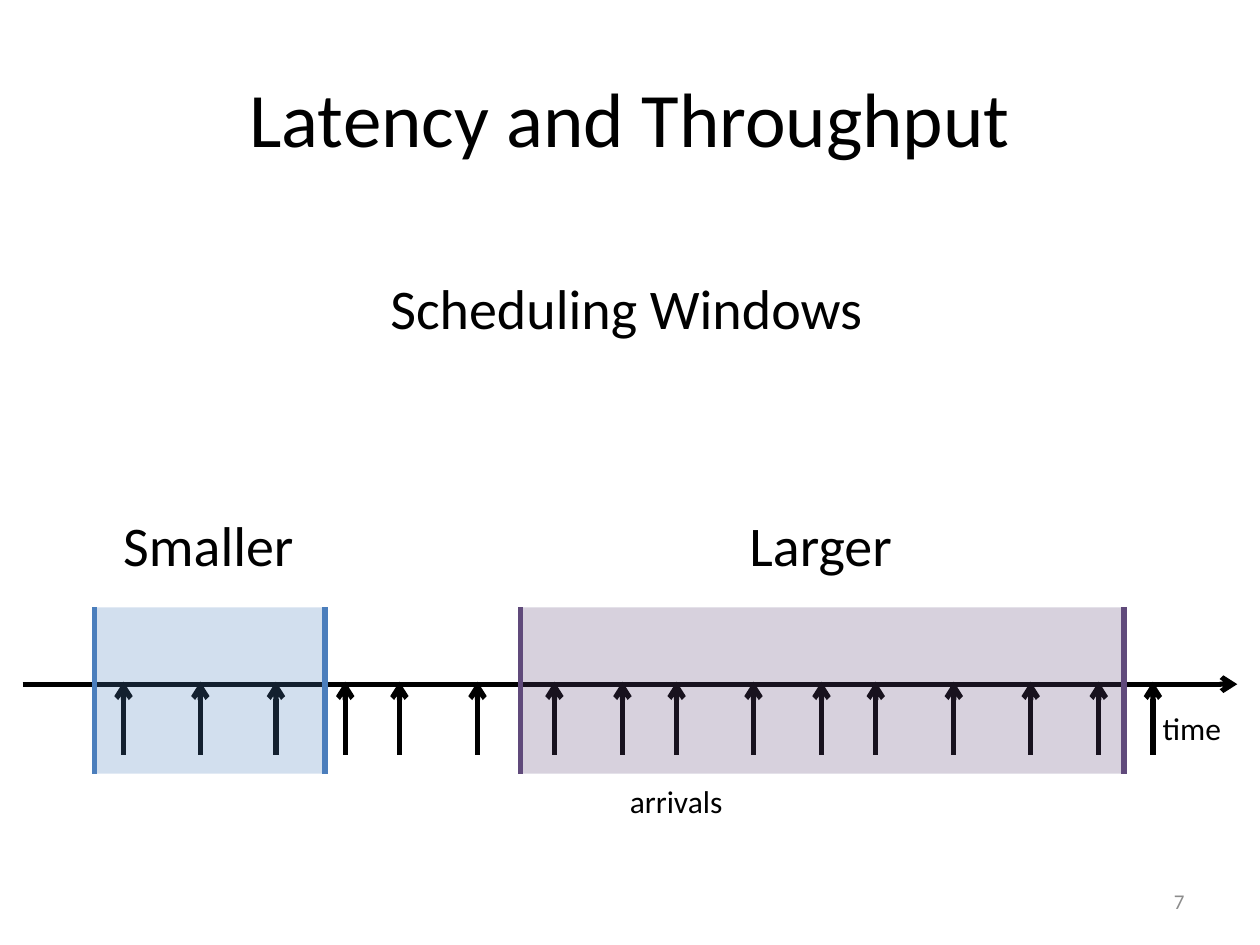
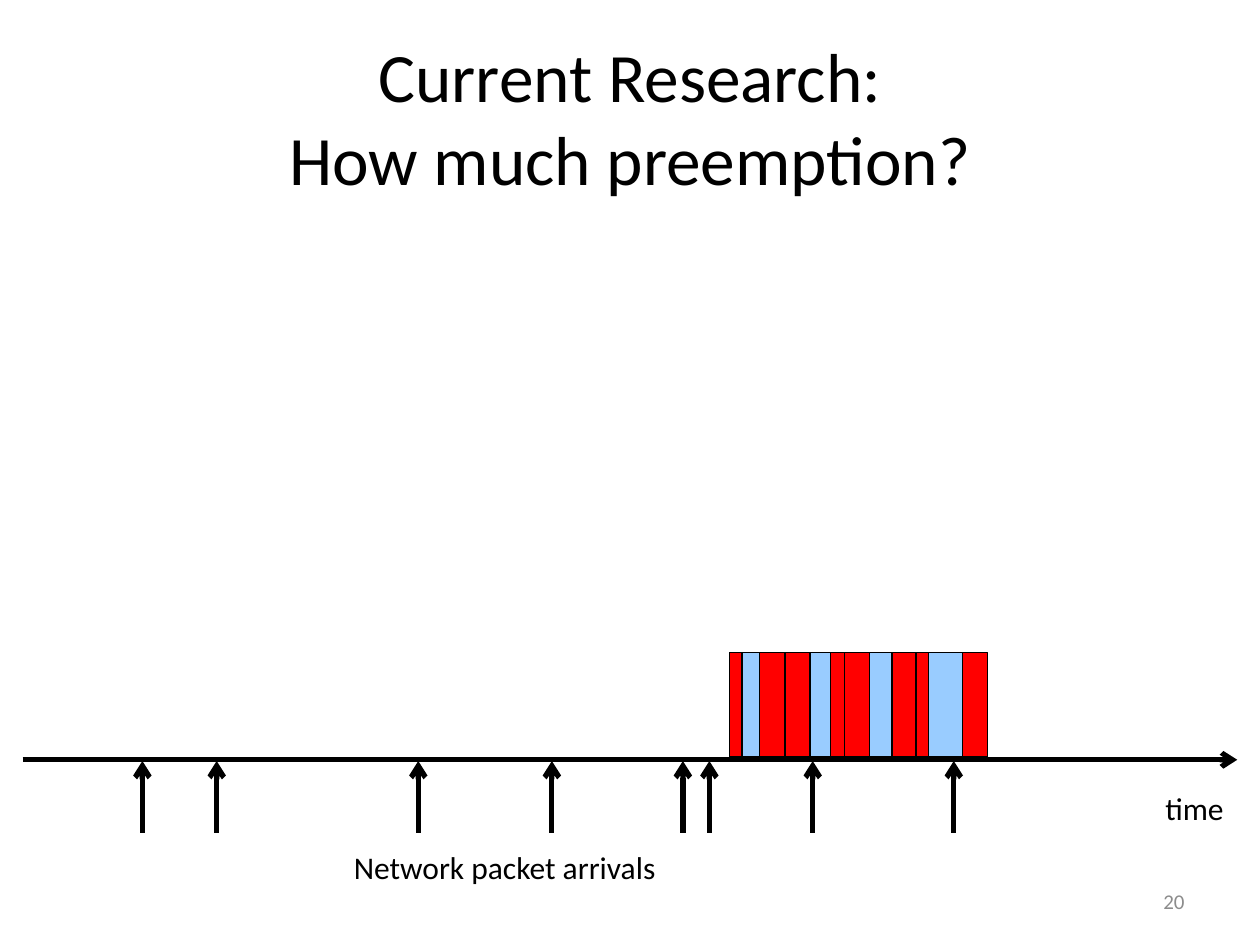
"""Build two slides on scheduling windows and preemption along a packet timeline."""
from lxml.etree import SubElement
from pptx import Presentation
from pptx.dml.color import RGBColor
from pptx.enum.shapes import MSO_CONNECTOR, MSO_SHAPE
from pptx.enum.text import MSO_ANCHOR, MSO_AUTO_SIZE, PP_ALIGN
from pptx.oxml.ns import qn
from pptx.util import Inches, Pt

FONT = "Calibri"
COLORS = {
    "ink": "000000",
    "number": "8C8C8C",
    "small_fill": "4F81BD",
    "small_edge": "4B7EBC",
    "large": "604A7B",
    "task": "99CCFF",
    "preemption": "FF0000",
}
AXIS_LEFT, AXIS_RIGHT = 0.18, 9.82
WINDOW_TOP, WINDOW_HEIGHT = 4.82, 1.32
BLOCKS_LEFT, BLOCK_TOP, BLOCK_HEIGHT = 5.79, 5.18, 0.83

WINDOWS_SLIDE = {
    "title": "Latency and Throughput",
    "title_size": 44,
    "number": "7",
    "axis": 5.43,
    "arrow_span": (5.99, 5.41),
    "arrivals": [0.98, 1.59, 2.19, 2.74, 3.17, 3.79, 4.4, 4.94,
                 5.37, 5.98, 6.52, 6.95, 7.57, 8.18, 8.72, 9.15],
    "labels": [
        ("time", 9.13, 5.58, 0.67, 18),
        ("arrivals", 4.9, 6.16, 0.94, 18),
        ("Smaller", 0.88, 4, 1.57, 32),
        ("Scheduling Windows", 3, 2.12, 3.99, 32),
        ("Larger", 5.85, 4, 1.34, 32),
    ],
}
WINDOWS = [
    (0.75, 2.58, "small_fill", "small_edge"),
    (4.13, 8.92, "large", "large"),
]

PREEMPTION_SLIDE = {
    "title": "Current Research:\vHow much preemption?",
    "title_size": 39.6,
    "number": "20",
    "axis": 6.03,
    "arrow_span": (6.61, 6.04),
    "arrivals": [1.13, 1.72, 3.32, 4.38, 5.42, 5.63, 6.45, 7.57],
    "labels": [
        ("Network packet arrivals", 2.71, 6.68, 3.48, 18),
        ("time", 9.15, 6.21, 0.67, 18),
    ],
}
BLOCKS = [
    ("preemption", 0.1), ("task", 0.14), ("preemption", 0.2),
    ("preemption", 0.2), ("task", 0.16), ("preemption", 0.11),
    ("preemption", 0.2), ("task", 0.18), ("preemption", 0.19),
    ("preemption", 0.1), ("task", 0.27), ("preemption", 0.2),
]


def color(name):
    return RGBColor.from_string(COLORS[name])


def style_paragraph(paragraph, size, color_name="ink"):
    paragraph.font.name = FONT
    paragraph.font.size = Pt(size)
    paragraph.font.color.rgb = color(color_name)


def add_line(slide, start, end, color_name="ink", width=3, arrow=False):
    connector = slide.shapes.add_connector(
        MSO_CONNECTOR.STRAIGHT, *(Inches(value) for value in (*start, *end)))
    connector.line.color.rgb = color(color_name)
    connector.line.width = Pt(width)
    if arrow:
        SubElement(connector.line._get_or_add_ln(), qn("a:tailEnd"), type="arrow")
    SubElement(connector._element.spPr, qn("a:effectLst"))


def add_rectangle(slide, left, top, width, height, fill, line=None, opacity=None):
    shape = slide.shapes.add_shape(
        MSO_SHAPE.RECTANGLE, *(Inches(value) for value in (left, top, width, height)))
    shape.shadow.inherit = False
    shape.fill.solid()
    shape.fill.fore_color.rgb = color(fill)
    if opacity is not None:
        fill_color = shape._element.spPr.find(qn("a:solidFill"))[0]
        SubElement(fill_color, qn("a:alpha"), val=str(opacity * 1000))
    if line:
        shape.line.color.rgb = color(line)
        shape.line.width = Pt(0.75)
    else:
        shape.line.fill.background()


def add_text(slide, text, left, top, width, height):
    box = slide.shapes.add_textbox(*(Inches(value) for value in (left, top, width, height)))
    box.text_frame.text = text
    return box.text_frame


def add_label(slide, text, left, top, width, size):
    frame = add_text(slide, text, left, top, width, size / 50 + 0.04)
    frame.word_wrap = False
    frame.auto_size = MSO_AUTO_SIZE.SHAPE_TO_FIT_TEXT
    paragraph = frame.paragraphs[0]
    paragraph.alignment = PP_ALIGN.LEFT
    style_paragraph(paragraph, size)


def add_number(slide, number):
    frame = add_text(slide, number, 7.17, 6.95, 2.33, 0.4)
    frame.word_wrap = True
    frame.vertical_anchor = MSO_ANCHOR.MIDDLE
    paragraph = frame.paragraphs[0]
    paragraph.alignment = PP_ALIGN.RIGHT
    style_paragraph(paragraph, 12, "number")


def add_timeline_slide(presentation, content):
    slide = presentation.slides.add_slide(presentation.slide_layouts[5])
    title = slide.shapes.title
    title.left, title.top, title.width, title.height = (
        Inches(value) for value in (0.5, 0.3, 9, 1.25))
    title.text_frame.text = content["title"]
    title.text_frame.vertical_anchor = MSO_ANCHOR.MIDDLE
    paragraph = title.text_frame.paragraphs[0]
    paragraph.alignment = PP_ALIGN.CENTER
    style_paragraph(paragraph, content["title_size"])
    add_number(slide, content["number"])

    axis = content["axis"]
    add_line(slide, (AXIS_LEFT, axis), (AXIS_RIGHT, axis), width=2.89, arrow=True)
    foot, tip = content["arrow_span"]
    for arrival in content["arrivals"]:
        add_line(slide, (arrival, foot), (arrival, tip), arrow=True)
    for label in content["labels"]:
        add_label(slide, *label)
    return slide


def main():
    presentation = Presentation()
    presentation.slide_width, presentation.slide_height = Inches(10), Inches(7.5)

    slide = add_timeline_slide(presentation, WINDOWS_SLIDE)
    for left, right, fill, edge in WINDOWS:
        add_rectangle(slide, left, WINDOW_TOP, right - left, WINDOW_HEIGHT, fill, opacity=25)
        for side in (left, right):
            add_line(slide, (side, WINDOW_TOP), (side, WINDOW_TOP + WINDOW_HEIGHT), edge)

    slide = add_timeline_slide(presentation, PREEMPTION_SLIDE)
    left = BLOCKS_LEFT
    for kind, width in BLOCKS:
        add_rectangle(slide, left, BLOCK_TOP, width, BLOCK_HEIGHT, kind, line="ink")
        left += width

    presentation.save("out.pptx")


if __name__ == "__main__":
    main()
